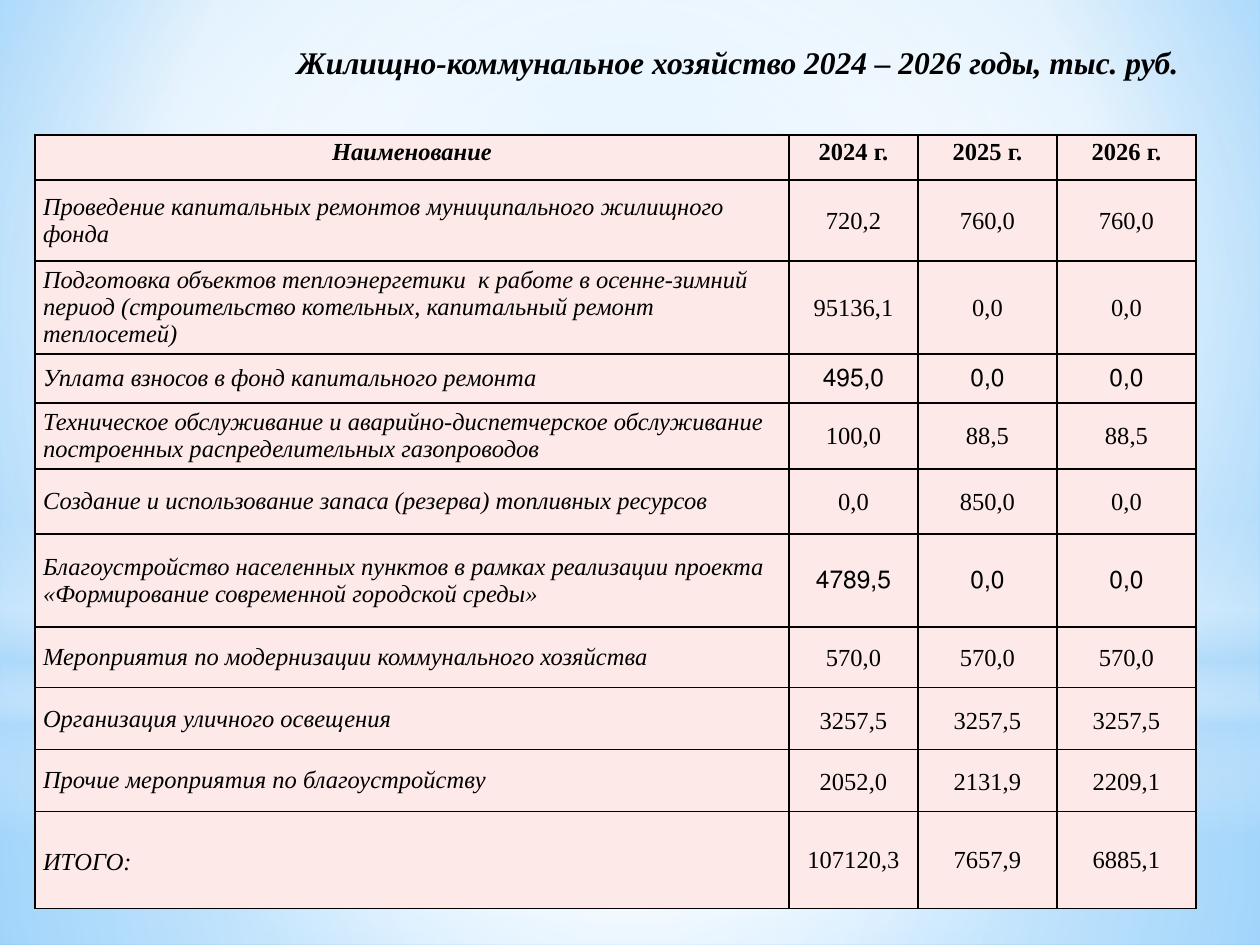
from lxml.etree import SubElement
from pptx import Presentation
from pptx.dml.color import RGBColor
from pptx.enum.shapes import MSO_SHAPE as Shape
from pptx.enum.text import MSO_ANCHOR as Anchor, MSO_AUTO_SIZE as AutoSize, PP_ALIGN as Align
from pptx.oxml.ns import qn
from pptx.util import Emu, Pt

SCALE = 914400 // 126
FONT = "Times New Roman"
INK = "000000"
CELL_FILL = "FCE9E8"
CENTRE = (50, 50, 50, 50)

ROW_HEIGHTS = [45, 81, 93, 49, 66, 65, 93, 61, 62, 62, 97]
COLUMN_WIDTHS = [754, 129, 139, 139]
HEADER = ["Наименование", "2024 г.", "2025 г.", "2026 г."]
EXPENSES = [
    ["Проведение капитальных ремонтов муниципального жилищного фонда", "720,2", "760,0", "760,0"],
    ["Подготовка объектов теплоэнергетики  к работе в осенне-зимний период "
     "(строительство котельных, капитальный ремонт теплосетей)", "95136,1", "0,0", "0,0"],
    ["Уплата взносов в фонд капитального ремонта", "495,0", "0,0", "0,0"],
    ["Техническое обслуживание и аварийно-диспетчерское обслуживание "
     "построенных распределительных газопроводов", "100,0", "88,5", "88,5"],
    ["Создание и использование запаса (резерва) топливных ресурсов", "0,0", "850,0", "0,0"],
    ["Благоустройство населенных пунктов в рамках реализации проекта "
     "«Формирование современной городской среды»", "4789,5", "0,0", "0,0"],
    ["Мероприятия по модернизации коммунального хозяйства", "570,0", "570,0", "570,0"],
    ["Организация уличного освещения", "3257,5", "3257,5", "3257,5"],
    ["Прочие мероприятия по благоустройству", "2052,0", "2131,9", "2209,1"],
    ["ИТОГО:", "107120,3", "7657,9", "6885,1"],
]
RIGHT_TO_LEFT_ROWS = {3, 6}
LOOSE_ROWS = {8, 9}
TOTAL_ROW = len(EXPENSES)


def px(length):
    return Emu(length * SCALE)


def color(value):
    return RGBColor.from_string(value)


def write(frame, text, size=14, bold=False, italic=False, align=Align.LEFT, spacing=1.0, rtl=False):
    para = frame.paragraphs[0]
    para.alignment = align
    para.line_spacing = spacing
    if rtl:
        para._p.get_or_add_pPr().set("rtl", "1")
    span = para.add_run()
    span.text = text
    span.font.name = FONT
    span.font.size = Pt(size)
    span.font.bold = bold
    span.font.italic = italic
    span.font.color.rgb = color(INK)


def make_gradient(owner, stops, focus=None):
    solid = next(owner.iter(qn("a:solidFill")))
    grad = SubElement(solid.getparent(), qn("a:gradFill"), rotWithShape="1")
    solid.getparent().replace(solid, grad)
    stop_list = SubElement(grad, qn("a:gsLst"))
    for position, value, alpha in stops:
        stop = SubElement(stop_list, qn("a:gs"), pos=str(position * 1000))
        tint = SubElement(stop, qn("a:srgbClr"), val=value)
        if alpha < 100:
            SubElement(tint, qn("a:alpha"), val=str(alpha * 1000))
    if focus:
        path = SubElement(grad, qn("a:path"), path="circle")
        sides = {side: str(share * 1000) for side, share in zip("ltrb", focus)}
        SubElement(path, qn("a:fillToRect"), **sides)
    else:
        SubElement(grad, qn("a:lin"), ang="5400000", scaled="0")


class SlideBuilder:
    def __init__(self, deck):
        self.page = deck.slides.add_slide(deck.slide_layouts[5])

    def background(self, stops, focus):
        self.page.background.fill.solid()
        make_gradient(self.page.element, stops, focus)

    def glow(self, kind, left, top, width, height, stops, focus=None):
        shape = self.page.shapes.add_shape(kind, px(left), px(top), px(width), px(height))
        shape.shadow.inherit = False
        shape.fill.solid()
        make_gradient(shape.element, stops, focus)
        shape.line.fill.background()

    def title(self, text, left, top, width, height):
        box = self.page.shapes.title
        box.left, box.top, box.width, box.height = map(px, (left, top, width, height))
        frame = box.text_frame
        frame.word_wrap = True
        frame.auto_size = AutoSize.SHAPE_TO_FIT_TEXT
        frame.vertical_anchor = Anchor.TOP
        write(frame, text, size=18, bold=True, italic=True, align=Align.CENTER)
        box.element.getparent().append(box.element)

    def table(self, left, top, rows):
        holder = self.page.shapes.add_table(
            len(rows), len(COLUMN_WIDTHS), px(left), px(top),
            px(sum(COLUMN_WIDTHS)), px(sum(ROW_HEIGHTS)))
        table = holder.table
        table.first_row = False
        table.horz_banding = False
        for column, width in zip(table.columns, COLUMN_WIDTHS):
            column.width = px(width)
        for row, height in zip(table.rows, ROW_HEIGHTS):
            row.height = px(height)
        for row_index, texts in enumerate(rows):
            for column_index, text in enumerate(texts):
                self.cell(table.cell(row_index, column_index), text, row_index, column_index)

    def cell(self, cell, text, row, column):
        is_header = row == 0
        is_name = column == 0
        is_roomy = is_header or is_name or row in LOOSE_ROWS
        is_loose = is_header or (row == TOTAL_ROW if is_name else row in LOOSE_ROWS)
        cell.margin_left = cell.margin_right = px(8 if is_roomy else 1)
        cell.margin_top = px(0 if is_roomy else 1)
        cell.margin_bottom = 0
        cell.vertical_anchor = Anchor.TOP if is_header else Anchor.MIDDLE
        cell.fill.solid()
        cell.fill.fore_color.rgb = color(CELL_FILL)
        self.borders(cell)
        write(cell.text_frame, text, bold=is_header, italic=is_name,
              align=Align.LEFT if is_name and not is_header else Align.CENTER,
              spacing=1.15 if is_loose else 1.0,
              rtl=row in RIGHT_TO_LEFT_ROWS and not is_name)

    def borders(self, cell):
        properties = cell._tc.get_or_add_tcPr()
        for index, side in enumerate("LRTB"):
            line = SubElement(properties, qn(f"a:ln{side}"), w=str(Pt(1)))
            fill = SubElement(line, qn("a:solidFill"))
            SubElement(fill, qn("a:srgbClr"), val=INK)
            properties.insert(index, line)


def main():
    deck = Presentation()
    deck.slide_width, deck.slide_height = px(1260), px(945)
    builder = SlideBuilder(deck)
    builder.background([(0, "9ED5FF", 100), (60, "FFFFFF", 100), (100, "5BB9FF", 100)],
                       (20, 10, 20, 60))
    builder.glow(Shape.RECTANGLE, 0, 703, 1260, 242,
                 [(0, "FFFFFF", 91), (37, "FFFFFF", 76), (100, "B4DCFA", 79)], CENTRE)
    builder.glow(Shape.RECTANGLE, 0, 0, 1260, 703,
                 [(0, "FFFFFF", 89), (48, "FFFFFF", 62), (100, "B4DCFA", 79)], CENTRE)
    builder.glow(Shape.RECTANGLE, 0, 519, 1260, 315,
                 [(0, "FFFFFF", 0), (29, "FFFFFF", 30), (45, "B4DCFA", 40),
                  (55, "FFFFFF", 26), (65, "B4DCFA", 60), (100, "FFFFFF", 0)])
    builder.glow(Shape.OVAL, 0, 221, 1260, 703,
                 [(0, "FFFFFF", 100), (56, "FFFFFF", 0)], CENTRE)
    builder.title("Жилищно-коммунальное хозяйство 2024 – 2026 годы, тыс. руб.", 282, 37, 912, 50)
    builder.table(35, 135, [HEADER] + EXPENSES)
    deck.save("out.pptx")


if __name__ == "__main__":
    main()
